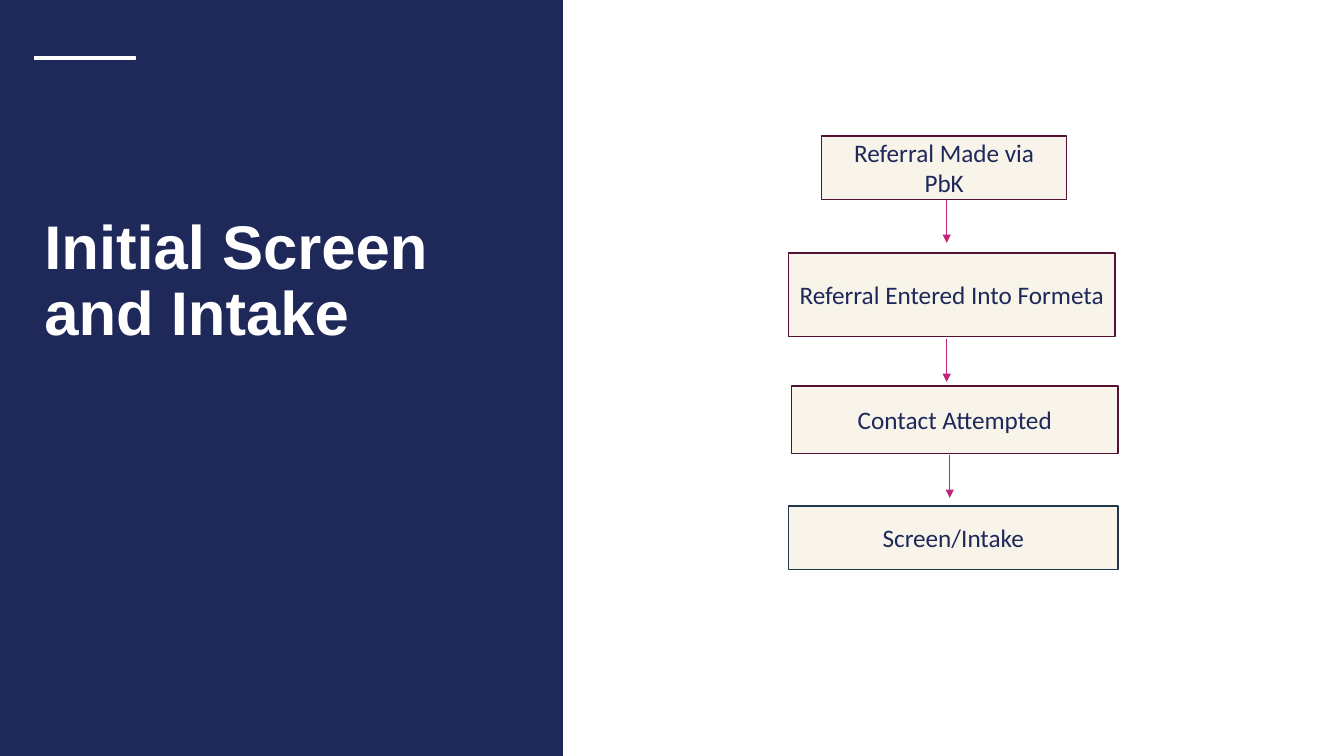
from pptx import Presentation
from pptx.dml.color import RGBColor
from pptx.enum.shapes import MSO_CONNECTOR, MSO_SHAPE
from pptx.enum.text import MSO_ANCHOR, PP_ALIGN
from pptx.oxml.ns import qn
from pptx.util import Inches, Pt
from lxml.etree import SubElement

COLORS = {
    "navy": "1E295A",
    "white": "FFFFFF",
    "cream": "F8F4EA",
    "plum": "541135",
    "slate": "203649",
    "magenta": "C0277A",
}


class FlowSlide:
    """Holds the slide and draws its elements in one shared style."""

    def __init__(self, slide):
        self.slide = slide
        self.shapes = slide.shapes

    def color(self, name):
        return RGBColor.from_string(COLORS[name])

    def style_text(self, frame, text, font, size, color, align, bold=False):
        frame.text = text
        frame.word_wrap = True
        frame.vertical_anchor = MSO_ANCHOR.MIDDLE
        paragraph = frame.paragraphs[0]
        paragraph.alignment = align
        paragraph.font.name = font
        paragraph.font.size = Pt(size)
        paragraph.font.bold = bold
        paragraph.font.color.rgb = self.color(color)
        return paragraph

    def rectangle(self, left, top, width, height, fill, line):
        box = self.shapes.add_shape(
            MSO_SHAPE.RECTANGLE,
            Inches(left), Inches(top), Inches(width), Inches(height))
        box.shadow.inherit = False
        box.fill.solid()
        box.fill.fore_color.rgb = self.color(fill)
        box.line.color.rgb = self.color(line)
        box.line.width = Pt(1)
        return box

    def title(self, text, left, top, width, height):
        """Fill the title placeholder and bring it in front of the panel."""
        heading = self.shapes.title
        heading.left, heading.top = Inches(left), Inches(top)
        heading.width, heading.height = Inches(width), Inches(height)
        paragraph = self.style_text(
            heading.text_frame, text, "Arial", 44, "white", PP_ALIGN.LEFT, True)
        paragraph.line_spacing = 0.9
        self.shapes._spTree.append(heading._element)

    def step(self, text, left, top, width, height, line):
        box = self.rectangle(left, top, width, height, "cream", line)
        self.style_text(
            box.text_frame, text, "Calibri", 18, "navy", PP_ALIGN.CENTER)

    def down_arrow(self, x, top, length=0.43):
        arrow = self.shapes.add_connector(
            MSO_CONNECTOR.STRAIGHT,
            Inches(x), Inches(top), Inches(x), Inches(top + length))
        arrow.line.color.rgb = self.color("magenta")
        arrow.line.width = Pt(0.5)
        SubElement(arrow.line._get_or_add_ln(), qn("a:tailEnd"), type="triangle")
        SubElement(arrow._element.spPr, qn("a:effectLst"))


def main():
    deck = Presentation()
    deck.slide_width, deck.slide_height = Inches(13.33), Inches(7.5)
    title_only = deck.slide_layouts[5]
    flow = FlowSlide(deck.slides.add_slide(title_only))

    flow.rectangle(0, 0, 5.58, 7.5, "navy", "navy")
    flow.rectangle(0.34, 0.56, 1, 0.03, "white", "white")
    flow.title("Initial Screen and Intake", 0.34, 2.08, 4.37, 1.45)

    steps = [
        ("Referral Made via PbK", 8.15, 1.35, 2.43, 0.63, "plum"),
        ("Referral Entered Into Formeta", 7.82, 2.51, 3.24, 0.83, "plum"),
        ("Contact Attempted", 7.85, 3.83, 3.24, 0.67, "plum"),
        ("Screen/Intake", 7.82, 5.02, 3.27, 0.63, "slate"),
    ]
    for step in steps:
        flow.step(*step)
    for x, top in [(9.39, 1.98), (9.39, 3.36), (9.42, 4.51)]:
        flow.down_arrow(x, top)

    deck.save("out.pptx")


if __name__ == "__main__":
    main()
